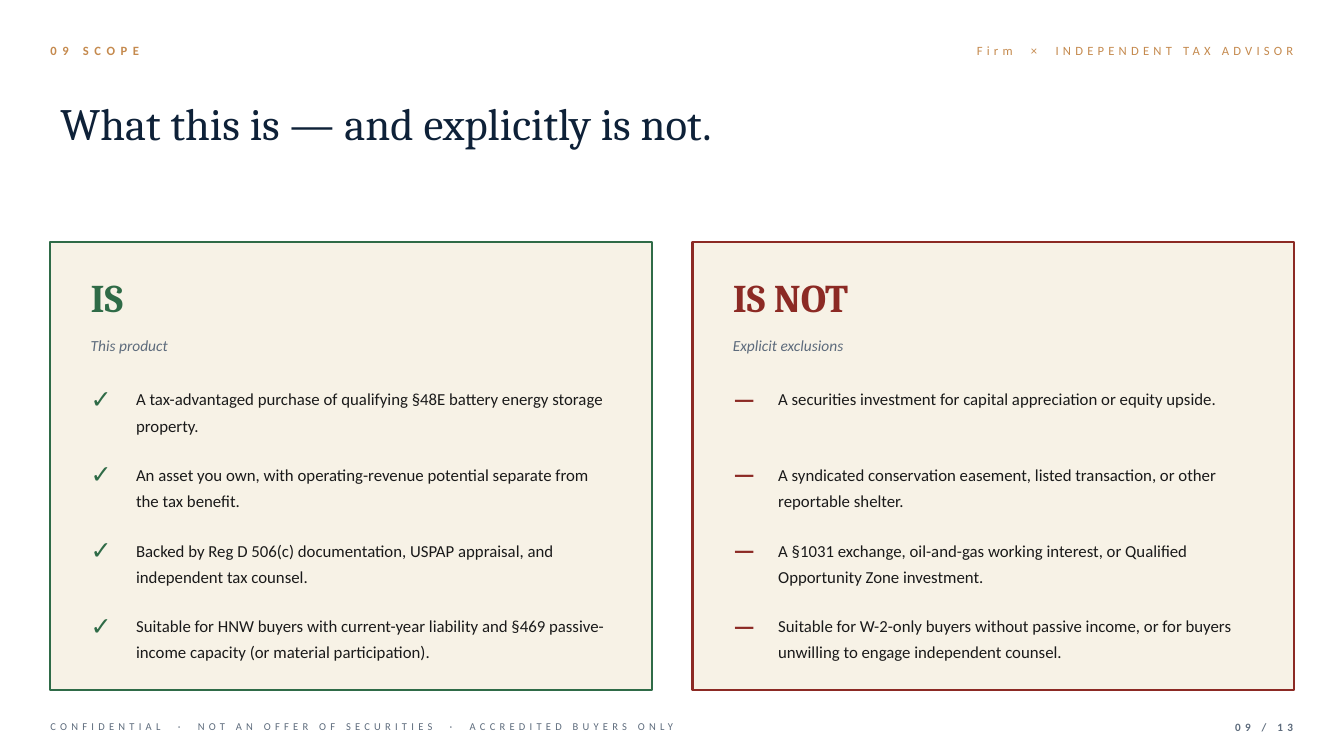
from dataclasses import dataclass
from typing import Any

from pptx import Presentation
from pptx import util as u
from pptx.dml.color import RGBColor
from pptx.enum import shapes, text

NAVY, BRONZE, SLATE, INK = "0E2138", "C58A4E", "5D6B7C", "1A1A1A"
CREAM, GREEN, RED = "F7F2E6", "2F6B47", "8C2A24"
MARGIN = 36
PANEL_TOP, PANEL_WIDTH, PANEL_HEIGHT, PANEL_PITCH = 172.8, 429.84, 320.4, 458.64
PADDING, MARK_WIDTH, MARK_PITCH = 28.8, 28.8, 32.4
ROW_TOP, ROW_PITCH = 273.6, 54

TOP = text.MSO_ANCHOR.TOP
MIDDLE = text.MSO_ANCHOR.MIDDLE
RIGHT = text.PP_ALIGN.RIGHT


@dataclass
class Style:
    size: float
    color: str
    font: str = "Calibri"
    bold: bool = False
    italic: bool = False
    tracking: float = 0
    line_spacing: float = 1.0
    align: Any = text.PP_ALIGN.LEFT
    anchor: Any = MIDDLE


@dataclass
class Panel:
    heading: str
    subtitle: str
    color: str
    mark: str
    items: list[str]


@dataclass
class Label:
    words: str
    box: tuple[float, float, float, float]
    style: Style
    separator: str = ""


PANELS = [
    Panel("IS", "This product", GREEN, "✓", [
        "A tax-advantaged purchase of qualifying §48E battery energy storage property.",
        "An asset you own, with operating-revenue potential separate from the tax benefit.",
        "Backed by Reg D 506(c) documentation, USPAP appraisal, and independent tax counsel.",
        "Suitable for HNW buyers with current-year liability and §469 passive-income "
        "capacity (or material participation).",
    ]),
    Panel("IS NOT", "Explicit exclusions", RED, "—", [
        "A securities investment for capital appreciation or equity upside.",
        "A syndicated conservation easement, listed transaction, or other reportable shelter.",
        "A §1031 exchange, oil-and-gas working interest, or Qualified Opportunity Zone "
        "investment.",
        "Suitable for W-2-only buyers without passive income, or for buyers unwilling to "
        "engage independent counsel.",
    ]),
]

LABELS = [
    Label("09 SCOPE", (MARGIN, 25.2, 540, 21.6),
          Style(9, BRONZE, bold=True, tracking=4)),
    Label("Firm × INDEPENDENT TAX ADVISOR", (540, 25.2, 383.76, 21.6),
          Style(9, BRONZE, tracking=3, align=RIGHT), "×"),
    Label("CONFIDENTIAL · NOT AN OFFER OF SECURITIES · ACCREDITED BUYERS ONLY",
          (MARGIN, 511.2, 684, 15.84), Style(7.5, SLATE, tracking=3), "·"),
    Label("09 / 13", (858.96, 511.2, 64.8, 15.84),
          Style(8, SLATE, bold=True, tracking=3, align=RIGHT)),
]


def rgb(code: str) -> RGBColor:
    return RGBColor.from_string(code)


def add_span(para, words: str, style: Style, tracking: float) -> None:
    span = para.add_run()
    span.text = words
    formats = {"name": style.font, "size": u.Pt(style.size),
               "bold": style.bold, "italic": style.italic}
    for name, value in formats.items():
        setattr(span.font, name, value)
    span.font.color.rgb = rgb(style.color)
    if tracking:
        span._r.get_or_add_rPr().set("spc", str(round(tracking * 100)))


def write(box, words: str, style: Style, separator: str = "") -> None:
    """Fill a box with one paragraph, with wide gaps around any separator."""
    frame = box.text_frame
    formats = {"word_wrap": True, "auto_size": text.MSO_AUTO_SIZE.NONE,
               "vertical_anchor": style.anchor, "margin_left": 0, "margin_top": 0,
               "margin_right": 0, "margin_bottom": 0}
    for name, value in formats.items():
        setattr(frame, name, value)
    para = frame.paragraphs[0]
    para.alignment = style.align
    para.line_spacing = style.line_spacing
    pieces = words.split(f" {separator} ") if separator else [words]
    wide = 2 * style.tracking + style.size * 0.23
    for index, piece in enumerate(pieces):
        if index:
            add_span(para, " ", style, wide)
            add_span(para, separator, style, style.tracking)
            add_span(para, " ", style, wide)
        add_span(para, piece, style, style.tracking)


def add_text(page, words: str, area: tuple[float, float, float, float],
             style: Style, separator: str = "") -> None:
    box = page.shapes.add_textbox(*map(u.Pt, area))
    write(box, words, style, separator)


def add_title(page, words: str) -> None:
    title = page.shapes.title
    area = {"left": 43.2, "top": 68.4, "width": 873.36, "height": 86.4}
    for name, value in area.items():
        setattr(title, name, u.Pt(value))
    write(title, words, Style(32, NAVY, "Cambria", anchor=TOP))


def add_panel(page, panel: Panel, left: float) -> None:
    card = page.shapes.add_shape(
        shapes.MSO_SHAPE.RECTANGLE,
        *map(u.Pt, (left, PANEL_TOP, PANEL_WIDTH, PANEL_HEIGHT)))
    card.shadow.inherit = False
    card.fill.solid()
    card.fill.fore_color.rgb = rgb(CREAM)
    card.line.color.rgb = rgb(panel.color)
    card.line.width = u.Pt(1.5)

    inner = left + PADDING
    width = PANEL_WIDTH - 2 * PADDING
    add_text(page, panel.heading, (inner, 194.4, width, 36),
             Style(28, panel.color, "Cambria", bold=True))
    add_text(page, panel.subtitle, (inner, 234, width, 25.2),
             Style(11, SLATE, italic=True))
    mark_style = Style(18, panel.color, bold=True, anchor=TOP)
    item_style = Style(12, INK, line_spacing=1.3, anchor=TOP)
    for row, item in enumerate(panel.items):
        top = ROW_TOP + row * ROW_PITCH
        add_text(page, panel.mark, (inner, top, MARK_WIDTH, 46.8), mark_style)
        add_text(page, item, (inner + MARK_PITCH, top, width - MARK_PITCH, 50.4), item_style)


def main() -> None:
    deck = Presentation()
    deck.slide_width, deck.slide_height = u.Pt(960), u.Pt(540)
    page = deck.slides.add_slide(deck.slide_layouts[5])
    add_title(page, "What this is — and explicitly is not.")
    for label in LABELS:
        add_text(page, label.words, label.box, label.style, label.separator)
    for column, panel in enumerate(PANELS):
        add_panel(page, panel, MARGIN + column * PANEL_PITCH)
    deck.save("out.pptx")


if __name__ == "__main__":
    main()
